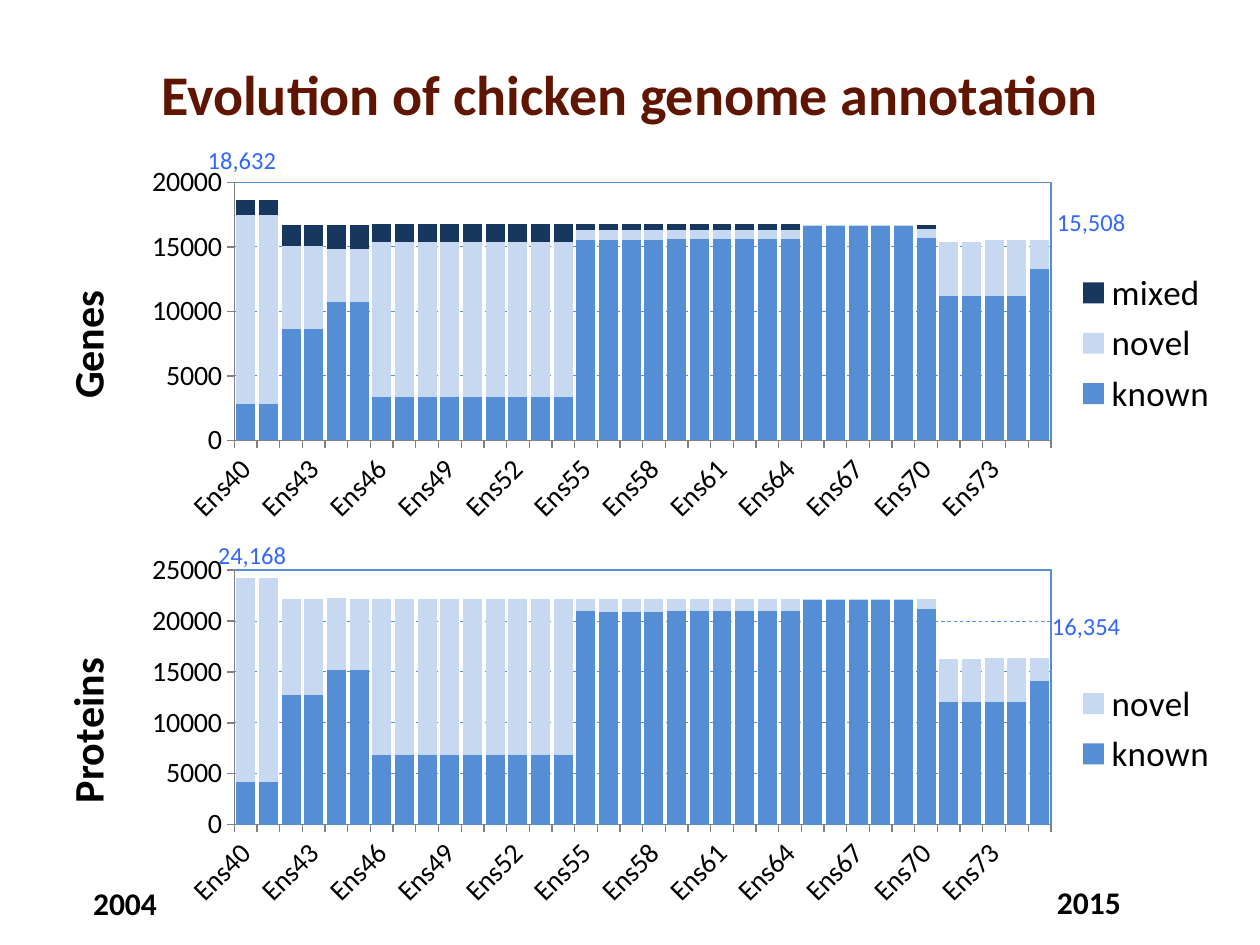
"""Build the slide on the evolution of chicken genome annotation."""
from dataclasses import dataclass

import pptx
import pptx.chart.data
import pptx.dml.color
import pptx.enum.chart
import pptx.enum.dml
import pptx.enum.text
import pptx.oxml
import pptx.oxml.ns
import pptx.util

Pt = pptx.util.Pt
RGBColor = pptx.dml.color.RGBColor
qn = pptx.oxml.ns.qn

FONT = "Calibri"
BLACK = RGBColor(0x00, 0x00, 0x00)
GREY = RGBColor(0x80, 0x80, 0x80)
BROWN = RGBColor(0x5F, 0x15, 0x00)
LABEL_BLUE = RGBColor(0x33, 0x66, 0xFF)
KNOWN_BLUE = RGBColor(0x55, 0x8E, 0xD5)
NOVEL_BLUE = RGBColor(0xC6, 0xD9, 0xF1)
MIXED_BLUE = RGBColor(0x17, 0x37, 0x5E)

RELEASES = [f"Ens{number}" for number in range(40, 76)]
PLOT_LAYOUT = {"x": 0.17, "y": 0.07, "w": 0.68, "h": 0.69}
YEAR_FORMAT = {"size": Pt(18), "bold": True}
TITLE_FORMAT = {"size": Pt(32), "bold": True}
TOTAL_FORMAT = {"size": Pt(14), "bold": False}


@dataclass
class Series:
    """A series as (value, number of consecutive releases) stretches."""
    name: str
    color: RGBColor
    stretches: list[tuple[int, int]]

    def values(self) -> list[int]:
        """Return one value for each release."""
        return [value for value, count in self.stretches for _ in range(count)]


@dataclass
class AnnotationChart:
    """A stacked chart of annotated items."""
    title: str
    top: float
    height: float
    maximum: int
    series: list[Series]


@dataclass
class Label:
    """A text with its place in points."""
    text: str
    left: float
    top: float
    width: float
    height: float
    color: RGBColor
    font: dict
    centered: bool = False


CHARTS = [
    AnnotationChart("Genes", 89.3, 213.8, 20000, [
        Series("known", KNOWN_BLUE, [
            (2800, 2), (8600, 2), (10700, 2), (3400, 9), (15500, 4), (15600, 6),
            (16600, 5), (15700, 1), (11200, 4), (13300, 1)]),
        Series("novel", NOVEL_BLUE, [
            (14700, 2), (6500, 2), (4100, 2), (12000, 9), (800, 4), (700, 6),
            (100, 5), (700, 1), (4200, 2), (4300, 2), (2200, 1)]),
        Series("mixed", MIXED_BLUE, [
            (1100, 2), (1600, 2), (1900, 2), (1400, 9), (500, 10), (0, 5),
            (300, 1), (0, 5)]),
    ]),
    AnnotationChart("Proteins", 311, 211, 25000, [
        Series("known", KNOWN_BLUE, [
            (4200, 2), (12700, 2), (15200, 2), (6800, 9), (21000, 1), (20900, 3),
            (21000, 6), (22100, 5), (21200, 1), (12000, 4), (14100, 1)]),
        Series("novel", NOVEL_BLUE, [
            (20000, 2), (9500, 2), (7100, 1), (7000, 1), (15400, 9), (1200, 1),
            (1300, 3), (1200, 6), (100, 5), (1000, 1), (4300, 2), (4400, 2),
            (2300, 1)]),
    ]),
]

LABELS = [
    Label("Evolution of chicken genome annotation", 36, 21.6, 648, 63.4, BROWN, TITLE_FORMAT, True),
    Label("2004", 46.1, 501.8, 51, 29, BLACK, YEAR_FORMAT),
    Label("2015", 596.9, 501.1, 51, 29, BLACK, YEAR_FORMAT),
    Label("16,354", 594, 345.6, 54, 24.5, LABEL_BLUE, TOTAL_FORMAT),
    Label("24,168", 117.4, 305.3, 54, 24.5, LABEL_BLUE, TOTAL_FORMAT),
    Label("18,632", 111.6, 79.2, 54, 24.5, LABEL_BLUE, TOTAL_FORMAT),
    Label("15,508", 596.9, 114.5, 54, 24.5, LABEL_BLUE, TOTAL_FORMAT),
]


def set_font(font: pptx.text.text.Font, color: RGBColor, **values) -> None:
    """Apply the slide typeface, a colour and format values."""
    for name, value in {"name": FONT, **values}.items():
        setattr(font, name, value)
    font.color.rgb = color


def set_plot_area(chart: pptx.chart.chart.Chart) -> None:
    """Place the plot area and outline it."""
    plot_area = chart.element.find(".//" + qn("c:plotArea"))
    for layout in plot_area.findall(qn("c:layout")):
        plot_area.remove(layout)
    namespaces = pptx.oxml.ns.nsdecls("c", "a")
    modes = "".join(f'<c:{key}Mode val="edge"/>' for key in "xy")
    places = "".join(f'<c:{key} val="{value}"/>' for key, value in PLOT_LAYOUT.items())
    plot_area.insert(0, pptx.oxml.parse_xml(
        f'<c:layout {namespaces}><c:manualLayout><c:layoutTarget val="inner"/>'
        f'{modes}{places}</c:manualLayout></c:layout>'))
    plot_area.append(pptx.oxml.parse_xml(
        f'<c:spPr {namespaces}><a:noFill/><a:ln w="9525"><a:solidFill>'
        f'<a:srgbClr val="{KNOWN_BLUE}"/></a:solidFill></a:ln></c:spPr>'))


def format_axes(chart: pptx.chart.chart.Chart, item: AnnotationChart) -> None:
    """Format both axes, their labels, title and gridlines."""
    for axis in (chart.category_axis, chart.value_axis):
        axis.major_tick_mark = pptx.enum.chart.XL_TICK_MARK.OUTSIDE
        axis.minor_tick_mark = pptx.enum.chart.XL_TICK_MARK.NONE
        axis.format.line.color.rgb = GREY
        axis.format.line.width = Pt(0.75)
        set_font(axis.tick_labels.font, BLACK, size=Pt(16), bold=False)
    categories = chart.category_axis._element
    categories.find(qn("c:txPr")).find(qn("a:bodyPr")).set("rot", "-2700000")
    skips = {"tickLblSkip": 3, "tickMarkSkip": 1}
    for tag, count in skips.items():
        skip = pptx.oxml.parse_xml(
            f'<c:{tag} {pptx.oxml.ns.nsdecls("c")} val="{count}"/>')
        categories.find(qn("c:noMultiLvlLbl")).addprevious(skip)

    values = chart.value_axis
    scale = {"minimum_scale": 0, "maximum_scale": item.maximum, "major_unit": 5000}
    for name, value in scale.items():
        setattr(values, name, value)
    grid = values.major_gridlines.format.line
    grid.color.rgb = KNOWN_BLUE
    grid.width = Pt(0.5)
    grid.dash_style = pptx.enum.dml.MSO_LINE.DASH
    frame = values.axis_title.text_frame
    frame.text = item.title
    frame._txBody.find(qn("a:bodyPr")).set("rot", "-5400000")
    set_font(frame.paragraphs[0].runs[0].font, BLACK, size=Pt(24), bold=True)


def draw_chart(slide: pptx.slide.Slide, item: AnnotationChart) -> None:
    """Draw one stacked column chart."""
    data = pptx.chart.data.CategoryChartData()
    data.categories = RELEASES
    for series in item.series:
        data.add_series(series.name, series.values())
    chart = slide.shapes.add_chart(
        pptx.enum.chart.XL_CHART_TYPE.COLUMN_STACKED,
        Pt(17.3), Pt(item.top), Pt(686.2), Pt(item.height), data).chart
    set_font(chart.font, BLACK, size=Pt(10))
    chart.has_title = False
    plot = chart.plots[0]
    for name, value in {"gap_width": 20, "overlap": 100, "vary_by_categories": False}.items():
        setattr(plot, name, value)
    for drawn, series in zip(plot.series, item.series):
        drawn.format.fill.solid()
        drawn.format.fill.fore_color.rgb = series.color
    chart.has_legend = True
    chart.legend.position = pptx.enum.chart.XL_LEGEND_POSITION.RIGHT
    chart.legend.include_in_layout = False
    set_font(chart.legend.font, BLACK, size=Pt(20))
    format_axes(chart, item)
    set_plot_area(chart)


def draw_label(slide: pptx.slide.Slide, label: Label) -> None:
    """Draw one text box."""
    shape = slide.shapes.add_textbox(
        Pt(label.left), Pt(label.top), Pt(label.width), Pt(label.height))
    frame = shape.text_frame
    frame.word_wrap = label.centered
    paragraph = frame.paragraphs[0]
    if label.centered:
        frame.vertical_anchor = pptx.enum.text.MSO_ANCHOR.MIDDLE
        paragraph.alignment = pptx.enum.text.PP_ALIGN.CENTER
    run = paragraph.add_run()
    run.text = label.text
    set_font(run.font, label.color, **label.font)


def main() -> None:
    """Build and save the presentation."""
    presentation = pptx.Presentation()
    presentation.slide_width, presentation.slide_height = Pt(720), Pt(540)
    slide = presentation.slides.add_slide(presentation.slide_layouts[6])
    for item in CHARTS:
        draw_chart(slide, item)
    for label in LABELS:
        draw_label(slide, label)
    presentation.save("out.pptx")


if __name__ == "__main__":
    main()
